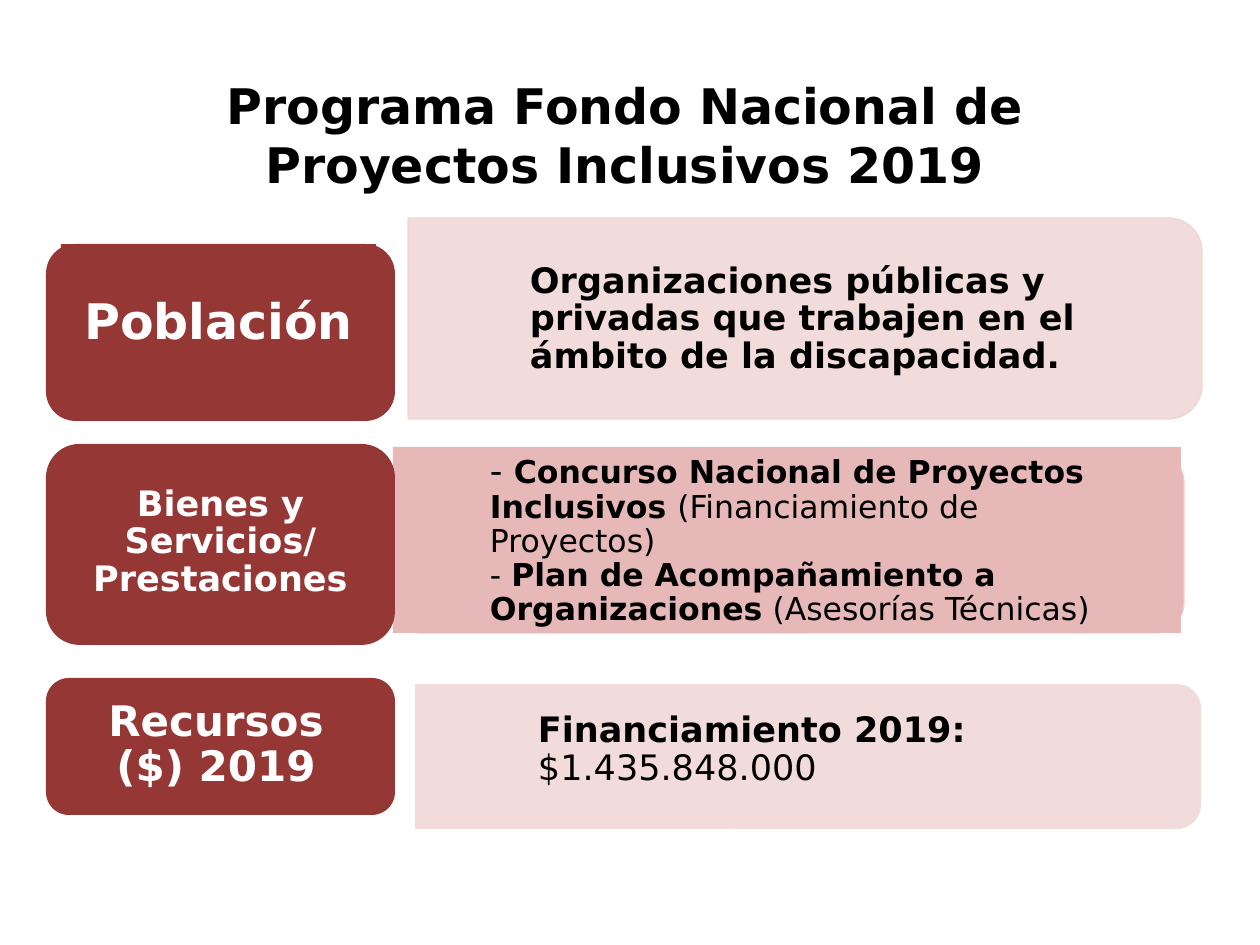
from pptx import Presentation
from pptx.dml.color import RGBColor
from pptx.enum.shapes import MSO_SHAPE as Shape
from pptx.enum.text import MSO_ANCHOR as Anchor, MSO_AUTO_SIZE as AutoSize, PP_ALIGN as Align
from pptx.oxml.ns import qn
from pptx.util import Emu, Pt
from lxml import etree

PX = 914400 / 126
FONT = "DejaVu Sans"
COLORS = {
    "black": "000000", "white": "FFFFFF", "wine": "953735",
    "pale": "F2DCDB", "pink": "E6B9B8",
    "pale_edge": "F0D3D3", "pink_edge": "F7CDCD",
}


def px(value):
    return Emu(round(value * PX))


def color(name):
    return RGBColor.from_string(COLORS[name])


class SlideBuilder:
    def __init__(self, slide):
        self.shapes = slide.shapes

    def block(self, kind, box, fill, edge=None):
        shape = self.shapes.add_shape(kind, *map(px, box))
        shape.shadow.inherit = False
        shape.fill.solid()
        shape.fill.fore_color.rgb = color(fill)
        if edge:
            shape.line.color.rgb = color(edge)
            shape.line.width = Pt(0.75)
            # Edge at 90 % opacity
            rgb = shape.line._ln.find(".//" + qn("a:srgbClr"))
            etree.SubElement(rgb, qn("a:alpha")).set("val", "90000")
        else:
            shape.line.fill.background()
        return shape

    def panel(self, box, fill, edge):
        """Bar rounded on its right side: a quarter-turned, top-rounded rectangle."""
        left, top, width, height = box
        shift = (width - height) / 2
        upright = (left + shift, top - shift, height, width)
        shape = self.block(Shape.ROUND_2_SAME_RECTANGLE, upright, fill, edge)
        shape.adjustments[0] = 0.167
        shape.rotation = 90

    def tile(self, box):
        self.block(Shape.ROUNDED_RECTANGLE, box, "wine").adjustments[0] = 0.167

    def add_text(self, frame, paragraphs, ink, align, spacing=None, indent=0):
        frame.word_wrap = True
        for index, runs in enumerate(paragraphs):
            paragraph = frame.add_paragraph() if index else frame.paragraphs[0]
            paragraph.alignment = align
            paragraph.line_spacing = spacing
            if indent:
                paragraph.level = 1
                properties = paragraph._p.get_or_add_pPr()
                properties.set("marL", str(px(indent)))
                properties.set("indent", "0")
            for text, size, bold in runs:
                run = paragraph.add_run()
                run.text = text
                run.font.name = FONT
                run.font.size = Pt(size)
                run.font.bold = bold
                run.font.color.rgb = color(ink)

    def text_block(self, box, fill, insets, paragraphs, ink, align, indent=0):
        frame = self.block(Shape.RECTANGLE, box, fill).text_frame
        frame.vertical_anchor = Anchor.MIDDLE
        frame.margin_left = frame.margin_right = px(insets[0])
        frame.margin_top = frame.margin_bottom = px(insets[1])
        self.add_text(frame, paragraphs, ink, align, 0.9, indent)

    def detail(self, box, fill, paragraphs):
        self.text_block(box, fill, (34, 18), paragraphs, "black", Align.LEFT, indent=63)

    def label(self, box, insets, lines, size):
        paragraphs = [[(line, size, True)] for line in lines]
        self.text_block(box, "wine", insets, paragraphs, "white", Align.CENTER)

    def title(self, box, text):
        frame = self.shapes.add_textbox(*map(px, box)).text_frame
        self.add_text(frame, [[(text, 28, True)]], "black", Align.CENTER)
        frame.auto_size = AutoSize.SHAPE_TO_FIT_TEXT


def main():
    deck = Presentation()
    deck.slide_width, deck.slide_height = px(1260), px(945)
    builder = SlideBuilder(deck.slides.add_slide(deck.slide_layouts[6]))

    # Población
    builder.panel((408, 218, 794, 201), "pale", "pale_edge")
    builder.detail((433, 229, 732, 181), "pale", [
        [("Organizaciones públicas y privadas que trabajen en el ámbito de la discapacidad.",
          20, True)],
    ])
    builder.tile((46, 244, 349, 177))
    builder.label((61, 244, 315, 160), (16, 9), ["Población"], 28)

    # Bienes y servicios
    builder.panel((417, 452, 767, 181), "pink", "pink_edge")
    builder.detail((393, 447, 788, 186), "pink", [
        [("- ", 20, False), ("Concurso Nacional de Proyectos Inclusivos ", 18, True),
         ("(Financiamiento de Proyectos)", 18, False)],
        [("- ", 18, False), ("Plan de Acompañamiento a Organizaciones", 18, True),
         (" (Asesorías Técnicas)", 18, False)],
    ])
    builder.tile((46, 444, 349, 201))
    builder.label((67, 451, 307, 183), (13, 6), ["Bienes y Servicios/", "Prestaciones"], 20)

    # Recursos
    builder.panel((415, 684, 786, 145), "pale", None)
    builder.detail((441, 693, 699, 115), "pale", [
        [("Financiamiento 2019:", 20, True)],
        [("$1.435.848.000", 20, False)],
    ])
    builder.tile((46, 678, 349, 137))
    builder.label((61, 684, 310, 123), (13, 6), ["Recursos ($) 2019"], 24)

    # Title
    builder.title((92, 69, 1065, 131), "Programa Fondo Nacional de Proyectos Inclusivos 2019")

    deck.save("out.pptx")


if __name__ == "__main__":
    main()
